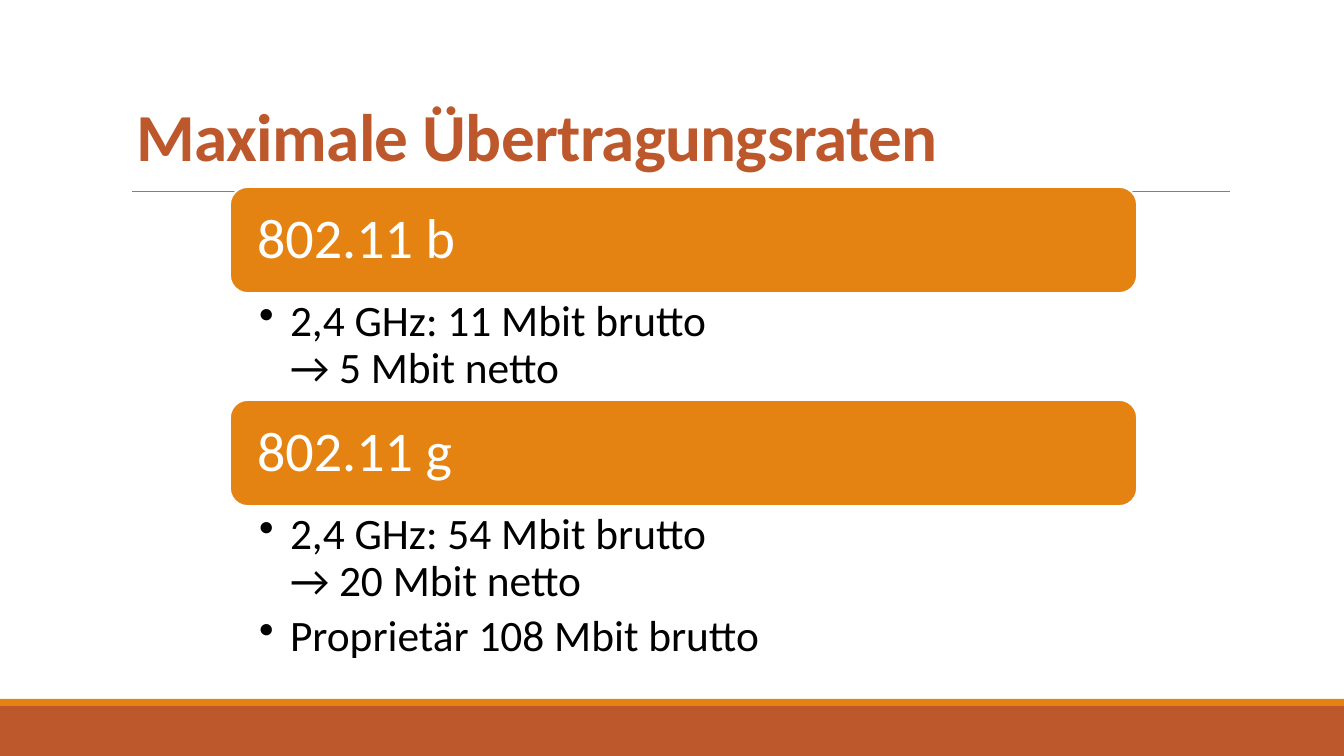
"""Build the slide on maximum WLAN transfer rates."""
import lxml.etree
import pptx
import pptx.dml.color
import pptx.enum.shapes
import pptx.enum.text
import pptx.oxml.ns
import pptx.util

RUST = pptx.dml.color.RGBColor(0xBD, 0x58, 0x2C)
ORANGE = pptx.dml.color.RGBColor(0xE4, 0x83, 0x12)
GREY = pptx.dml.color.RGBColor(0x80, 0x80, 0x80)
BLACK = pptx.dml.color.RGBColor(0, 0, 0)
WHITE = pptx.dml.color.RGBColor(255, 255, 255)

SHAPE = pptx.enum.shapes.MSO_SHAPE
ANCHOR = pptx.enum.text.MSO_ANCHOR
EMU_PER_PX = 914400 / 100.8
WIDTH, HEIGHT = 1344, 756
STANDARD_LEFT, STANDARD_WIDTH, HEADING_HEIGHT = 230, 907, 106
STANDARDS = [
    ("802.11 b", 187, 107, ["2,4 GHz: 11 Mbit brutto\v→ 5 Mbit netto"]),
    ("802.11 g", 400, 169, ["2,4 GHz: 54 Mbit brutto\v→ 20 Mbit netto",
                            "Proprietär 108 Mbit brutto"]),
]


def px(length):
    """Turn pixels into EMU."""
    return pptx.util.Emu(round(length * EMU_PER_PX))


def write(frame, paragraphs, *, size, color, bold=False, line_spacing=0.9, space_after=0,
          tracking=0, bullet_indent=0, anchor=ANCHOR.TOP, insets=(10, 5, 10, 5)):
    """Fill a text frame with formatted paragraphs."""
    frame.word_wrap = True
    frame.auto_size = pptx.enum.text.MSO_AUTO_SIZE.NONE
    frame.vertical_anchor = anchor
    frame.margin_left, frame.margin_top, frame.margin_right, frame.margin_bottom = map(px, insets)
    for index, wording in enumerate(paragraphs):
        paragraph = frame.add_paragraph() if index else frame.paragraphs[0]
        paragraph.text = wording
        if bullet_indent:
            properties = paragraph._p.get_or_add_pPr()
            properties.set("marL", str(px(bullet_indent)))
            properties.set("indent", str(-px(bullet_indent)))
            bullet = lxml.etree.SubElement(properties, pptx.oxml.ns.qn("a:buChar"))
            bullet.set("char", "•")
        paragraph.alignment = pptx.enum.text.PP_ALIGN.LEFT
        paragraph.line_spacing = line_spacing
        paragraph.space_after = pptx.util.Pt(space_after)
        for run in paragraph.runs:
            run.font.name = "Calibri"
            run.font.size = pptx.util.Pt(size)
            run.font.bold = bold
            run.font.color.rgb = color
            if tracking:
                run._r.get_or_add_rPr().set("spc", str(tracking))


class RatesSlide:
    """Hold the current slide and its element styles."""

    def __init__(self, slide):
        """Keep the slide to draw on."""
        self.slide = slide

    def title(self, wording, *box):
        """Place and format the title."""
        heading = self.slide.shapes.title
        heading.left, heading.top, heading.width, heading.height = map(px, box)
        write(heading.text_frame, [wording], size=48, color=RUST, bold=True,
              line_spacing=0.85, tracking=-50, anchor=ANCHOR.BOTTOM)

    def block(self, kind, fill, *box):
        """Draw a filled shape without outline."""
        block = self.slide.shapes.add_shape(kind, *map(px, box))
        block.shadow.inherit = False
        block.fill.solid()
        block.fill.fore_color.rgb = fill
        block.line.fill.background()
        return block

    def rule(self, left, right, top):
        """Draw the thin line under the title."""
        rule = self.slide.shapes.add_connector(
            pptx.enum.shapes.MSO_CONNECTOR.STRAIGHT, px(left), px(top), px(right), px(top))
        rule.line.color.rgb = GREY
        rule.line.width = pptx.util.Pt(0.5)
        lxml.etree.SubElement(rule._element.spPr, pptx.oxml.ns.qn("a:effectLst"))

    def heading(self, wording, top):
        """Draw the rounded heading of a standard."""
        heading = self.block(SHAPE.ROUNDED_RECTANGLE, ORANGE,
                             STANDARD_LEFT, top, STANDARD_WIDTH, HEADING_HEIGHT)
        heading.line.color.rgb = WHITE
        heading.line.width = pptx.util.Pt(1.25)
        write(heading.text_frame, [wording], size=40, color=WHITE,
              anchor=ANCHOR.MIDDLE, insets=(22, 22, 22, 22))

    def rates(self, items, top, height):
        """List the rates of a standard."""
        rates = self.slide.shapes.add_textbox(
            px(STANDARD_LEFT), px(top), px(STANDARD_WIDTH), px(height))
        write(rates.text_frame, items, size=31, color=BLACK, space_after=6,
              bullet_indent=31, insets=(29, 6, 31, 6))


def main():
    """Build and save the presentation."""
    presentation = pptx.Presentation()
    presentation.slide_width, presentation.slide_height = px(WIDTH), px(HEIGHT)
    page = RatesSlide(presentation.slides.add_slide(presentation.slide_layouts[5]))
    page.block(SHAPE.RECTANGLE, RUST, 0, 706, WIDTH, 50)
    page.block(SHAPE.RECTANGLE, ORANGE, 0, 699, WIDTH, 7)
    page.rule(132, 1230, 191)
    page.title("Maximale Übertragungsraten", 127, 34, 1109, 146)
    for name, top, rates_height, items in STANDARDS:
        page.heading(name, top)
        page.rates(items, top + HEADING_HEIGHT, rates_height)
    presentation.save("out.pptx")


if __name__ == "__main__":
    main()
